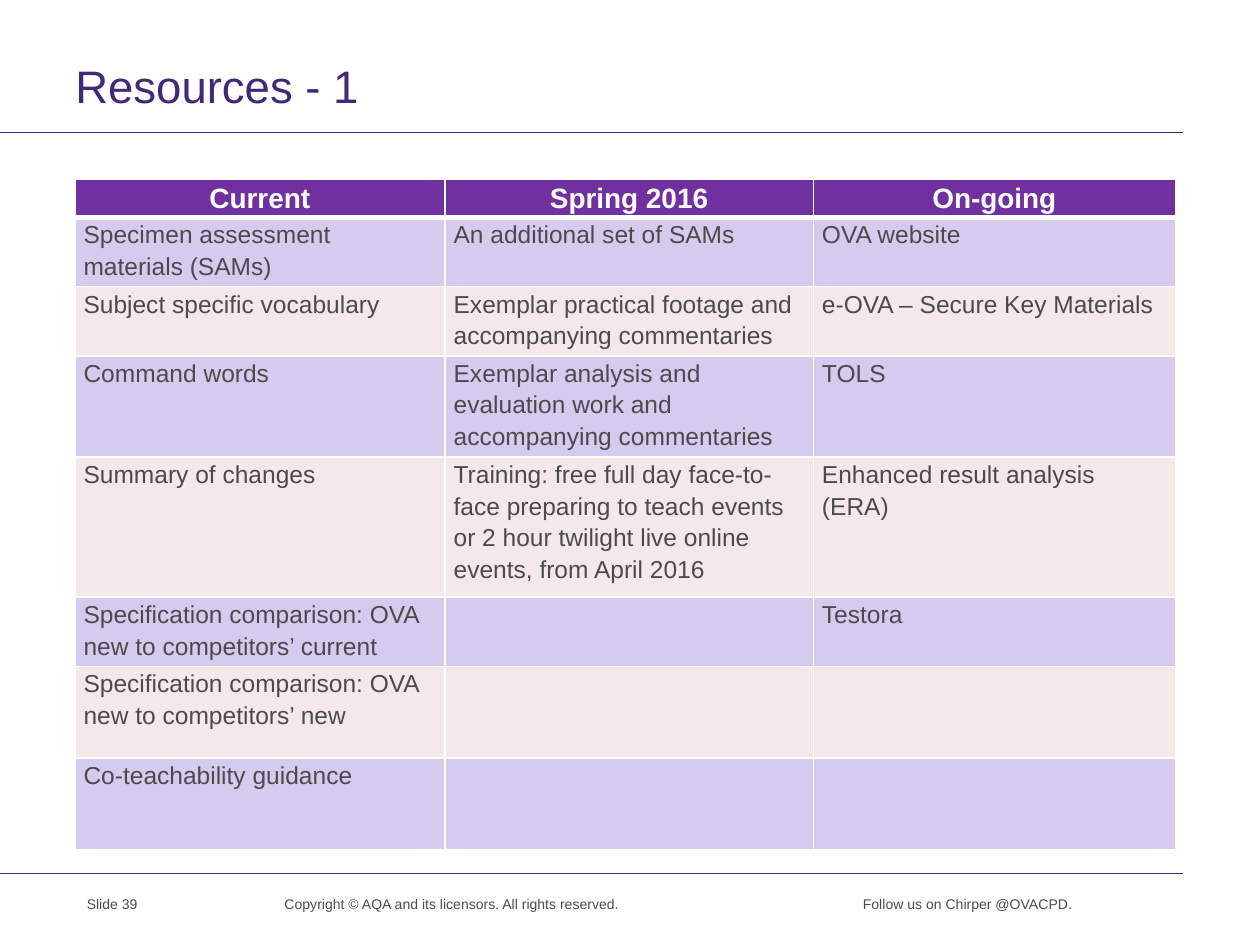
from lxml.etree import SubElement
from pptx import Presentation
from pptx.dml.color import RGBColor
from pptx.enum.shapes import MSO_CONNECTOR
from pptx.enum.text import MSO_ANCHOR, PP_ALIGN
from pptx.oxml.ns import qn
from pptx.util import Pt

PURPLE, GREY, WHITE = "412878", "4B4B4B", "FFFFFF"
HEADER, LILAC, PINK = "7030A0", "D5CBEE", "F5E8E9"


def color(value):
    return RGBColor.from_string(value)


def apply(target, values):
    for name, value in values.items():
        setattr(target, name, value)


class PageBuilder:
    font_name = "Arial"
    cell_format = {
        "margin_left": Pt(5), "margin_right": Pt(5),
        "margin_top": 0, "margin_bottom": 0,
    }

    def __init__(self, page):
        self.page = page

    def add_span(self, para, text, size, hue, bold=False, **layout):
        apply(para, layout)
        span = para.add_run()
        span.text = text
        apply(span.font, {"name": self.font_name, "size": Pt(size), "bold": bold})
        span.font.color.rgb = color(hue)

    def add_text(self, bounds, text, size, hue, anchor=MSO_ANCHOR.TOP, **layout):
        box = self.page.shapes.add_textbox(*map(Pt, bounds))
        frame = box.text_frame
        apply(frame, {"word_wrap": True, "vertical_anchor": anchor})
        self.add_span(frame.paragraphs[0], text, size, hue, **layout)

    def add_rule(self, top, width):
        line = self.page.shapes.add_connector(
            MSO_CONNECTOR.STRAIGHT, 0, Pt(top), Pt(width), Pt(top))
        line.line.width = Pt(0.6)
        line.line.color.rgb = color(PURPLE)
        SubElement(line._element.spPr, qn("a:effectLst"))

    def add_borders(self, cell, widths):
        properties = cell._tc.get_or_add_tcPr()
        for side, width in widths.items():
            edge = SubElement(properties, qn(f"a:ln{side}"), w=str(Pt(width)))
            fill = SubElement(edge, qn("a:solidFill"))
            SubElement(fill, qn("a:srgbClr"), val=WHITE)

    def add_table(self, left, top, widths, heights, rows):
        table = self.page.shapes.add_table(
            len(rows), len(widths), Pt(left), Pt(top),
            Pt(sum(widths)), Pt(sum(heights))).table
        apply(table, {"first_row": False, "horz_banding": False})
        for column, width in zip(table.columns, widths):
            column.width = Pt(width)
        for index, (row, height, texts) in enumerate(zip(table.rows, heights, rows)):
            row.height = Pt(height)
            is_header = index == 0
            fill = HEADER if is_header else LILAC if index % 2 else PINK
            size, hue = (16, WHITE) if is_header else (14, GREY)
            align = PP_ALIGN.CENTER if is_header else PP_ALIGN.LEFT
            edges = {"L": 1, "R": 1, "T": 3 if index == 1 else 1,
                     "B": 3 if is_header else 1}
            for cell, text in zip(row.cells, texts):
                apply(cell, self.cell_format)
                self.add_borders(cell, edges)
                cell.fill.solid()
                cell.fill.fore_color.rgb = color(fill)
                if text:
                    self.add_span(cell.text_frame.paragraphs[0], text, size, hue,
                                  is_header, alignment=align, line_spacing=1.15)


def main():
    deck = Presentation()
    apply(deck, {"slide_width": Pt(720), "slide_height": Pt(540)})
    builder = PageBuilder(deck.slides.add_slide(deck.slide_layouts[6]))

    for top in (75.6, 499):
        builder.add_rule(top, 676)
    builder.add_text((36, 31.5, 648, 37.5), "Resources - 1", 26, PURPLE,
                     MSO_ANCHOR.MIDDLE, line_spacing=Pt(28))

    builder.add_table(
        42.75, 102.25, (211.5, 210.5, 207),
        (19.5, 39.5, 39.5, 55.5, 80, 39.5, 52.5, 52.5),
        (
            ("Current", "Spring 2016", "On-going"),
            ("Specimen assessment materials (SAMs)",
             "An additional set of SAMs", "OVA website"),
            ("Subject specific vocabulary",
             "Exemplar practical footage and accompanying commentaries",
             "e-OVA – Secure Key Materials"),
            ("Command words",
             "Exemplar analysis and evaluation work and accompanying commentaries",
             "TOLS"),
            ("Summary of changes",
             "Training: free full day face-to-face preparing to teach events "
             "or 2 hour twilight live online events, from April 2016",
             "Enhanced result analysis (ERA)"),
            ("Specification comparison: OVA new to competitors’ current",
             "", "Testora"),
            ("Specification comparison: OVA new to competitors’ new", "", ""),
            ("Co-teachability guidance", "", ""),
        ))

    for left, width, text in (
        (42.5, 51, "Slide 39"),
        (155.5, 211, "Copyright © AQA and its licensors. All rights reserved."),
        (486, 195, "Follow us on Chirper @OVACPD."),
    ):
        builder.add_text((left, 508.3, width, 18.7), text, 8, GREY)

    deck.save("out.pptx")


if __name__ == "__main__":
    main()
